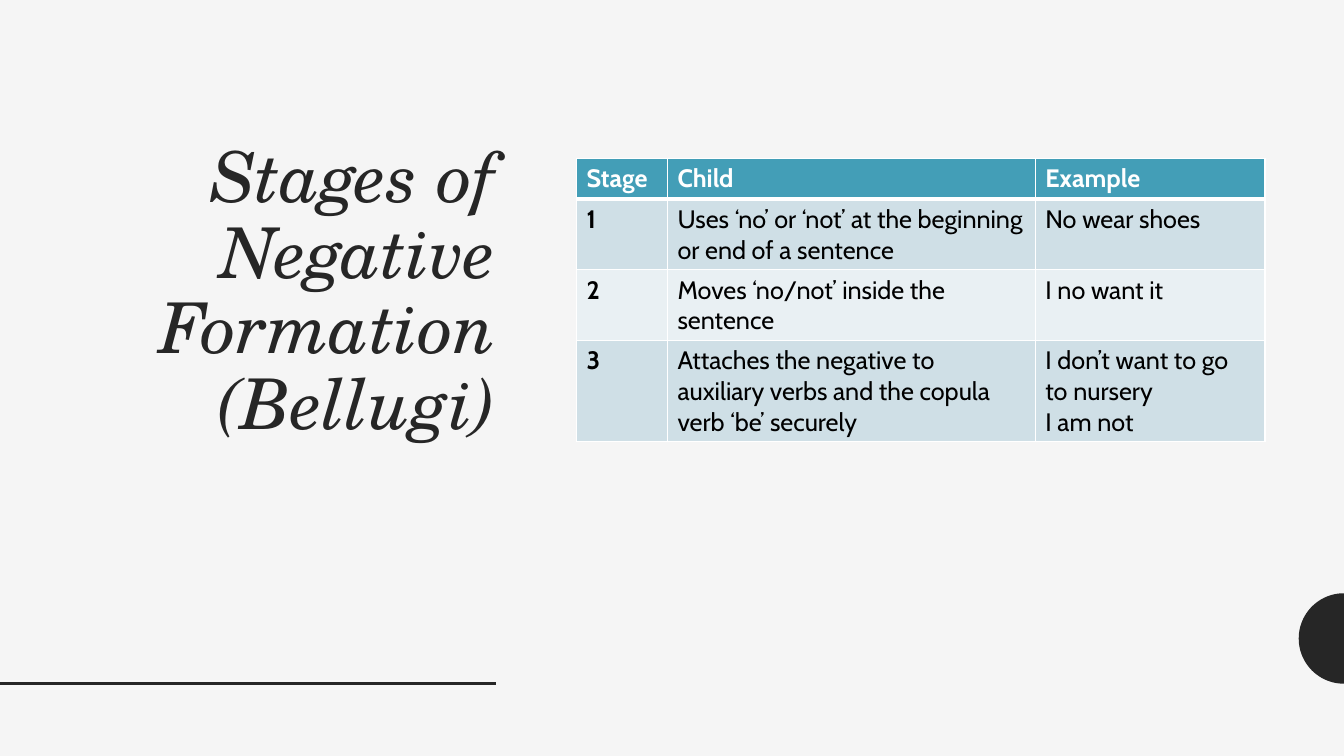
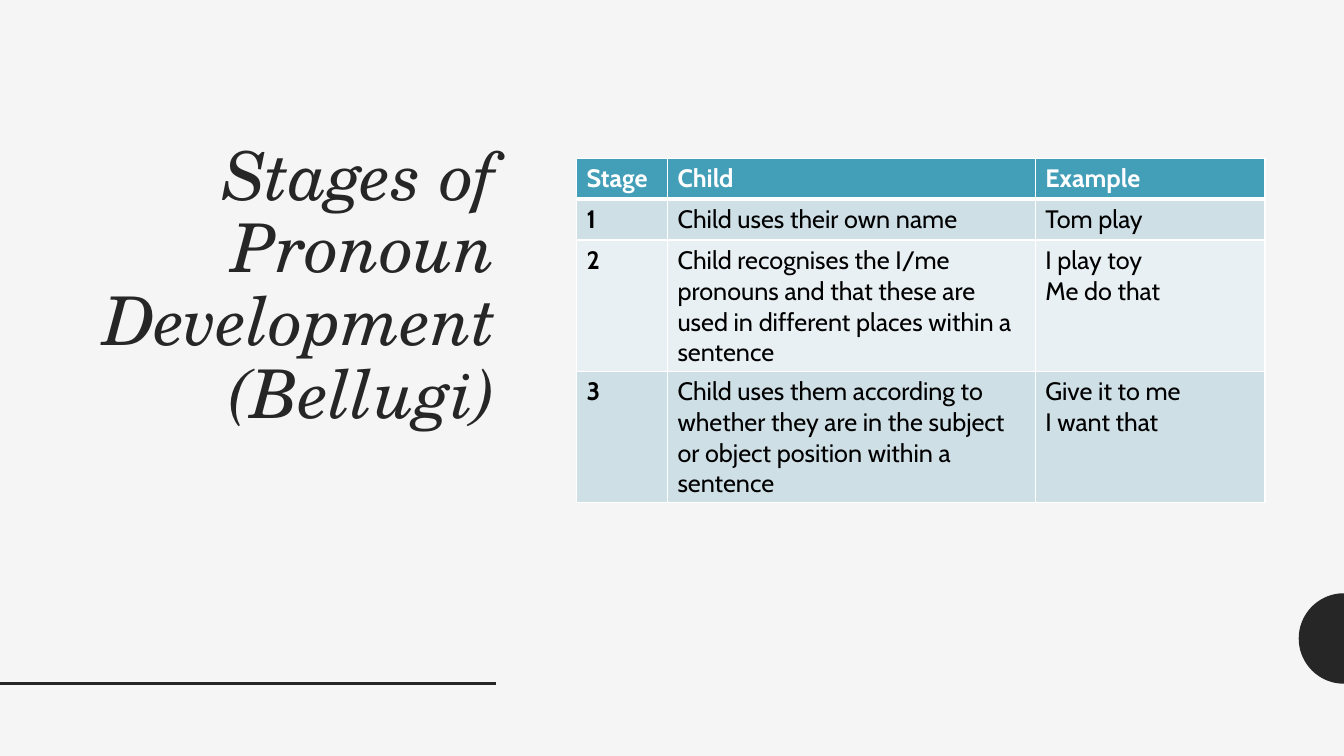
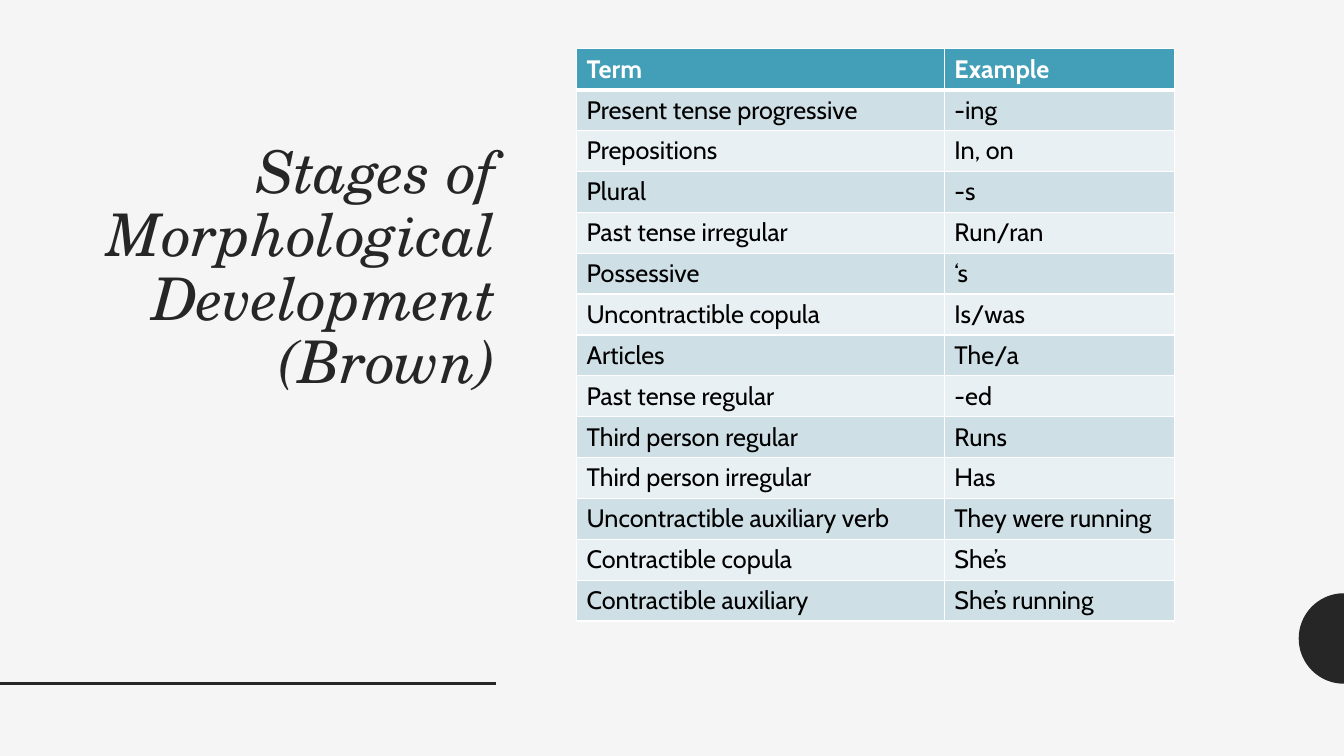
from math import cos, pi, sin

from lxml.etree import SubElement
from pptx import Presentation
from pptx.dml.color import RGBColor as Color
from pptx.enum.shapes import MSO_CONNECTOR as Connector
from pptx.enum.text import MSO_ANCHOR as Anchor, PP_ALIGN as Align
from pptx.oxml.ns import qn
from pptx.util import Cm, Pt

COLOURS = {
    "paper": "F5F5F5",
    "ink": "262626",
    "header": "439EB7",
    "odd": "CFDFE6",
    "even": "E9F0F3",
    "white": "FFFFFF",
    "black": "000000",
}
PAGE_WIDTH, PAGE_HEIGHT = 33.87, 19.05
TITLE_BOX = (2.11, 3.46, 10.64, 11.86)
RULE_BOX = (0, 17.22, 12.5, 0)
DISC_BOX = (32.73, 14.95, 1.14, 2.28)
TITLE_FORMAT = {"name": "TeX Gyre Schola", "italic": True, "bold": False}
CELL_FORMAT = {"name": "Cabin", "size": Pt(18)}
STAGE_COLUMNS = (2.29, 9.27, 5.79)
TERM_COLUMNS = STAGE_COLUMNS[1:]
ROW_HEIGHT = 1.03

SLIDES = [
    {
        "title": "Stages of Negative Formation\v(Bellugi)",
        "size": 50,
        "place": (14.53, 3.99, 7.14),
        "columns": STAGE_COLUMNS,
        "rows": [
            ("Stage", "Child", "Example"),
            ("1", "Uses ‘no’ or ‘not’ at the beginning or end of a sentence",
             "No wear shoes"),
            ("2", "Moves ‘no/not’ inside the sentence", "I no want it"),
            ("3", "Attaches the negative to auxiliary verbs and the copula "
             "verb ‘be’ securely", "I don’t want to go to nursery\nI am not"),
        ],
    },
    {
        "title": "Stages of Pronoun Development\v(Bellugi)",
        "size": 48,
        "place": (14.53, 3.99, 8.66),
        "columns": STAGE_COLUMNS,
        "rows": [
            ("Stage", "Child", "Example"),
            ("1", "Child uses their own name", "Tom play"),
            ("2", "Child recognises the I/me pronouns and that these are used "
             "in different places within a sentence", "I play toy\nMe do that"),
            ("3", "Child uses them according to whether they are in the subject "
             "or object position within a sentence",
             "Give it to me\nI want that"),
        ],
    },
    {
        "title": "Stages of Morphological Development (Brown)",
        "size": 42,
        "place": (14.53, 1.23, 14.42),
        "columns": TERM_COLUMNS,
        "rows": [
            ("Term", "Example"),
            ("Present tense progressive", "-ing"),
            ("Prepositions", "In, on"),
            ("Plural", "-s"),
            ("Past tense irregular", "Run/ran"),
            ("Possessive", "‘s"),
            ("Uncontractible copula", "Is/was"),
            ("Articles", "The/a"),
            ("Past tense regular", "-ed"),
            ("Third person regular", "Runs"),
            ("Third person irregular", "Has"),
            ("Uncontractible auxiliary verb", "They were running"),
            ("Contractible copula", "She’s"),
            ("Contractible auxiliary", "She’s running"),
        ],
    },
]


def colour(name):
    return Color.from_string(COLOURS[name])


def format_text(frame, values, ink):
    for para in frame.paragraphs:
        for span in para.runs:
            for key, value in values.items():
                setattr(span.font, key, value)
            span.font.color.rgb = colour(ink)


def add_half_disc(page, box):
    """Left half of a disc, flush with the right side of its box."""
    left, top, radius, height = box
    centre_x, centre_y = left + radius, top + height / 2
    steps = 48
    angles = [pi / 2 + pi * step / steps for step in range(steps + 1)]
    points = [(Cm(centre_x + radius * cos(a)), Cm(centre_y + radius * sin(a)))
              for a in angles]
    builder = page.shapes.build_freeform(*points[0])
    builder.add_line_segments(points[1:], close=True)
    disc = builder.convert_to_shape()
    disc.shadow.inherit = False
    disc.fill.solid()
    disc.fill.fore_color.rgb = colour("ink")
    disc.line.fill.background()


def add_rule(page, box):
    left, top, width, height = box
    rule = page.shapes.add_connector(
        Connector.STRAIGHT, Cm(left), Cm(top), Cm(left + width), Cm(top + height))
    rule.line.color.rgb = colour("ink")
    rule.line.width = Pt(2)
    SubElement(rule._element.spPr, qn("a:effectLst"))


def add_title(page, box, text, size):
    frame = page.shapes.add_textbox(*map(Cm, box)).text_frame
    frame.word_wrap = True
    frame.vertical_anchor = Anchor.TOP
    para = frame.paragraphs[0]
    para.text = text
    para.alignment = Align.RIGHT
    para.line_spacing = 0.9
    format_text(frame, {**TITLE_FORMAT, "size": Pt(size)}, "ink")


def add_borders(cell, widths):
    """White cell borders; widths maps a side (L, R, T, B) to points."""
    properties = cell._tc.get_or_add_tcPr()
    for side, width in widths.items():
        line = SubElement(properties, qn(f"a:ln{side}"), w=str(Pt(width)))
        solid = SubElement(line, qn("a:solidFill"))
        SubElement(solid, qn("a:srgbClr"), val=COLOURS["white"])


def add_stage_table(page, place, columns, rows):
    left, top, height = place
    shape = page.shapes.add_table(
        len(rows), len(columns), Cm(left), Cm(top), Cm(sum(columns)), Cm(height))
    table = shape.table
    for column, width in zip(table.columns, columns):
        column.width = Cm(width)
    for row_index, texts in enumerate(rows):
        table.rows[row_index].height = Cm(ROW_HEIGHT)
        is_header = row_index == 0
        fill = "header" if is_header else ("even", "odd")[row_index % 2]
        # The heavy line under the header belongs to the header cells
        widths = {"L": 1, "R": 1, "T": 1, "B": 3} if is_header else {
            "L": 1, "R": 1, "B": 1}
        for column_index, text in enumerate(texts):
            cell = table.cell(row_index, column_index)
            cell.text = text
            add_borders(cell, widths)
            cell.fill.solid()
            cell.fill.fore_color.rgb = colour(fill)
            bold = is_header or text.isdigit()
            format_text(cell.text_frame, {**CELL_FORMAT, "bold": bold},
                        "white" if is_header else "black")
    shape.height = Cm(height)


def add_stage_slide(deck, content):
    page = deck.slides.add_slide(deck.slide_layouts[6])
    # Shared decoration
    add_half_disc(page, DISC_BOX)
    add_rule(page, RULE_BOX)
    # Title and table
    add_title(page, TITLE_BOX, content["title"], content["size"])
    add_stage_table(page, content["place"], content["columns"], content["rows"])


def main():
    deck = Presentation()
    deck.slide_width, deck.slide_height = Cm(PAGE_WIDTH), Cm(PAGE_HEIGHT)
    background = deck.slide_master.background.fill
    background.solid()
    background.fore_color.rgb = colour("paper")
    for content in SLIDES:
        add_stage_slide(deck, content)
    deck.save("out.pptx")


if __name__ == "__main__":
    main()
